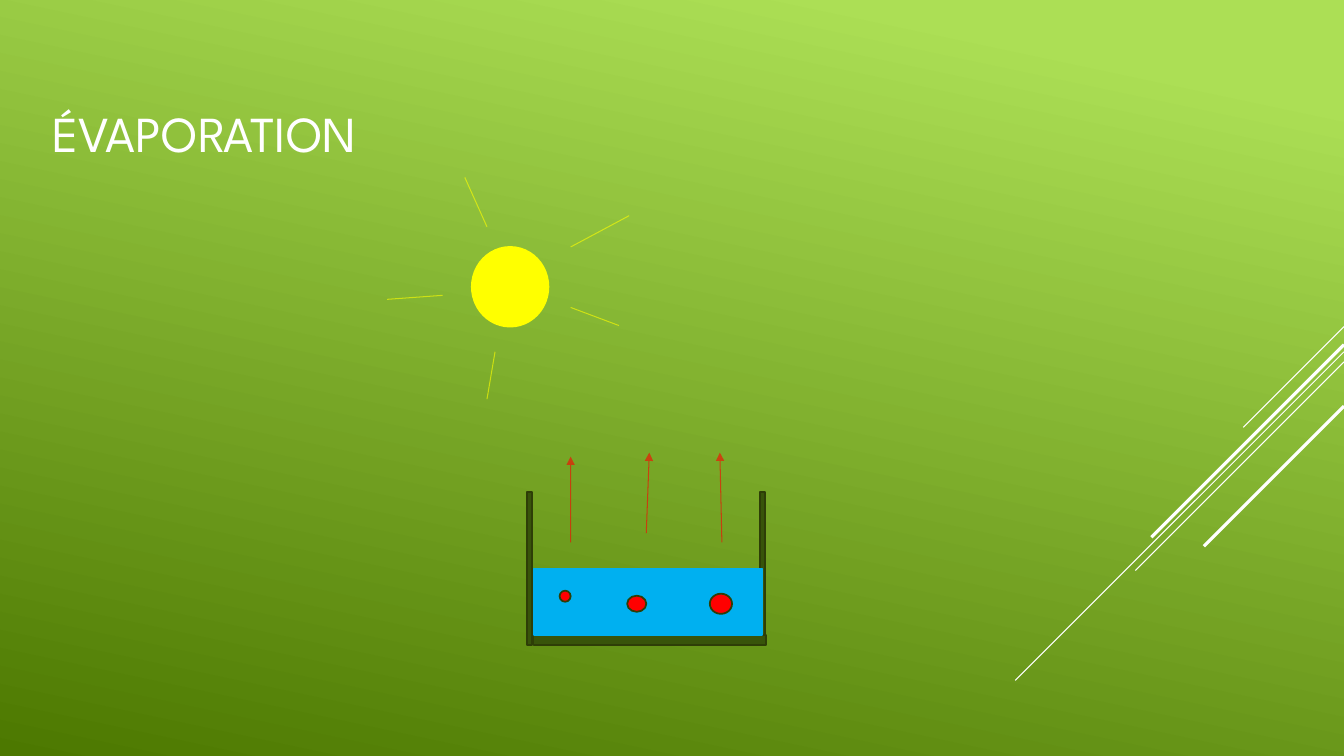
"""Build the evaporation slide: sun, water basin and rising vapour."""
import lxml.etree
import pptx
import pptx.dml.color
import pptx.enum.shapes
import pptx.enum.text
import pptx.oxml.ns
import pptx.util

Inches = pptx.util.Inches
Pt = pptx.util.Pt
qn = pptx.oxml.ns.qn
SHAPES = pptx.enum.shapes.MSO_SHAPE
ANCHOR = pptx.enum.text.MSO_ANCHOR

WHITE = "FFFFFF"
YELLOW = "FFFF00"
RED = "FF0000"
WATER = "00B0F0"
WALL = "38540A"
OUTLINE = "2E3E07"


def color(value):
    return pptx.dml.color.RGBColor.from_string(value)


def write(frame, text, *, font="League Spartan", size=36, fill=WHITE, anchor=ANCHOR.MIDDLE):
    frame.word_wrap = True
    frame.vertical_anchor = anchor
    run = frame.paragraphs[0].add_run()
    run.text = text
    run.font.name = font
    run.font.size = Pt(size)
    run.font.color.rgb = color(fill)


class Scene:
    def __init__(self, slide):
        self.slide = slide
        self.outline_width = 1.25
        self.ray_width = 0.75

    def background(self, start, end, angle):
        fill = self.slide.background.fill
        fill.gradient()
        fill.gradient_angle = 360 - angle
        for stop, (position, value) in zip(fill.gradient_stops, (start, end)):
            stop.position = position
            stop.color.rgb = color(value)

    def title(self, text, box):
        write(self.slide.shapes.add_textbox(*map(Inches, box)).text_frame, text)

    def shape(self, kind, box, fill, outline):
        shape = self.slide.shapes.add_shape(kind, *map(Inches, box))
        shape.shadow.inherit = False
        shape.fill.solid()
        shape.fill.fore_color.rgb = color(fill)
        shape.line.color.rgb = color(outline)
        shape.line.width = Pt(self.outline_width)

    def line(self, ends, stroke, width=None, opacity=100, arrow=False):
        line = self.slide.shapes.add_connector(
            pptx.enum.shapes.MSO_CONNECTOR.STRAIGHT, *map(Inches, ends))
        line.line.color.rgb = color(stroke)
        line.line.width = Pt(width or self.ray_width)
        properties = line.element.find(qn("p:spPr"))
        outline = properties.find(qn("a:ln"))
        if opacity < 100:
            tint = outline.find(".//" + qn("a:srgbClr"))
            lxml.etree.SubElement(tint, qn("a:alpha"), val=str(opacity * 1000))
        if arrow:
            lxml.etree.SubElement(outline, qn("a:tailEnd"), type="triangle")
        lxml.etree.SubElement(properties, qn("a:effectLst"))


def main():
    deck = pptx.Presentation()
    deck.slide_width = Inches(13.33)
    deck.slide_height = Inches(7.5)
    scene = Scene(deck.slides.add_slide(deck.slide_layouts[6]))
    scene.background((0.1, "ACDF55"), (1, "4C7800"), 102)

    right_edge = 13.33
    for top, run, width in ((3.24, 1, 0.75), (3.49, 3.26, 0.75), (3.59, 2.07, 0.75),
                            (3.42, 1.91, 2.25), (4.03, 1.39, 2.25)):
        scene.line((right_edge, top, right_edge - run, top + run), WHITE, width)

    scene.title("ÉVAPORATION", (0.42, 0.49, 9.33, 1.65))

    for wall in ((5.23, 4.88, 0.05, 1.52), (7.54, 4.88, 0.05, 1.52), (5.29, 6.3, 2.31, 0.1)):
        scene.shape(SHAPES.RECTANGLE, wall, WALL, OUTLINE)
    scene.shape(SHAPES.RECTANGLE, (5.3, 5.64, 2.26, 0.66), WATER, WATER)

    for vapour in ((7.16, 5.38, 7.14, 4.49), (6.41, 5.29, 6.44, 4.49), (5.66, 5.38, 5.66, 4.53)):
        scene.line(vapour, RED, opacity=60, arrow=True)

    scene.shape(SHAPES.OVAL, (4.68, 2.45, 0.76, 0.79), YELLOW, YELLOW)
    for ray in ((5.66, 3.05, 6.14, 3.23), (5.66, 2.45, 6.24, 2.14), (4.83, 2.25, 4.61, 1.76),
                (4.39, 2.93, 3.84, 2.97), (4.91, 3.49, 4.83, 3.96)):
        scene.line(ray, YELLOW, opacity=60)

    for particle in ((5.55, 5.86, 0.11, 0.11), (6.22, 5.91, 0.19, 0.16), (7.04, 5.89, 0.22, 0.2)):
        scene.shape(SHAPES.OVAL, particle, RED, OUTLINE)

    deck.save("out.pptx")


if __name__ == "__main__":
    main()
